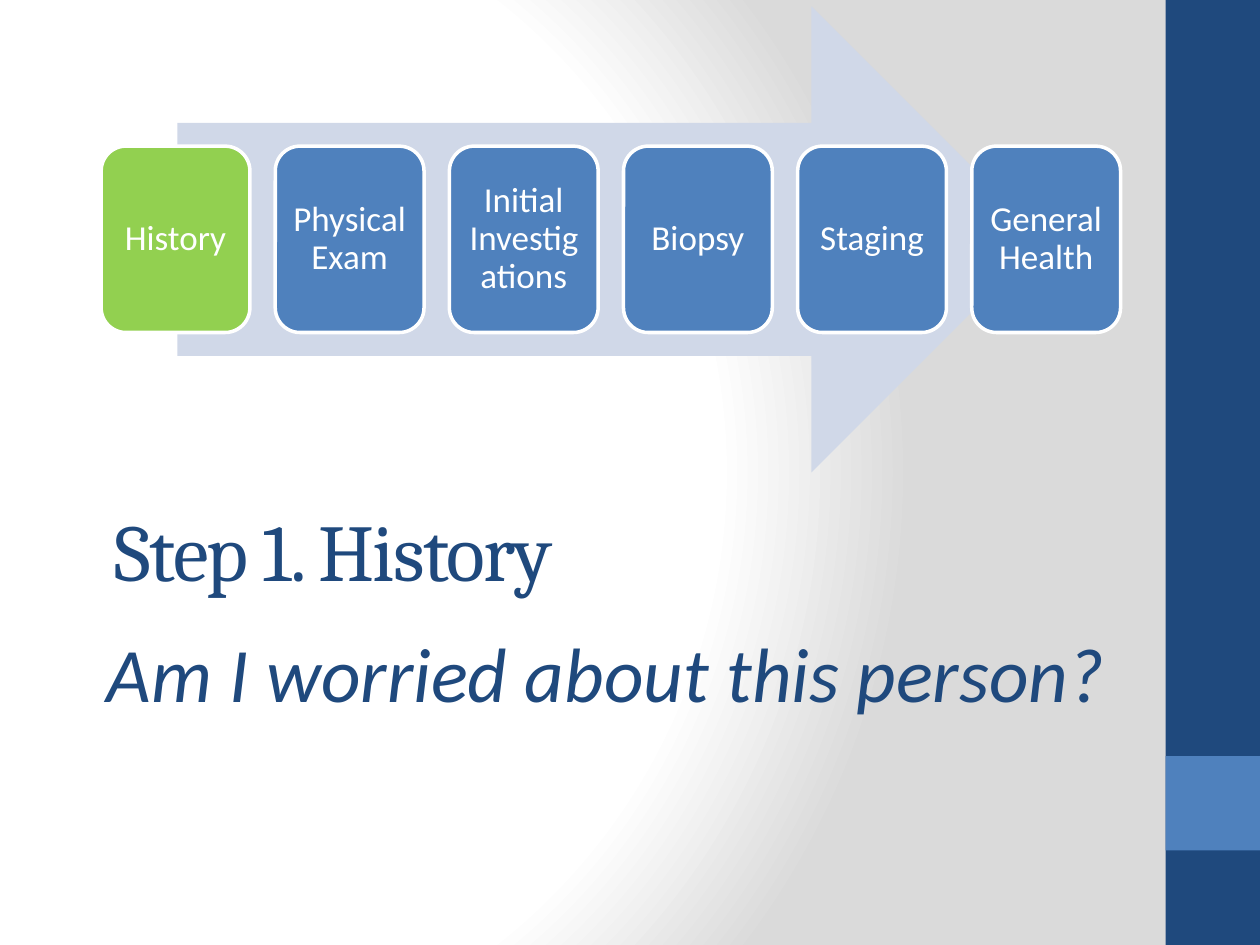
import pptx
import pptx.dml.color
import pptx.enum.shapes
import pptx.enum.text
import pptx.oxml
import pptx.oxml.ns
import pptx.util
from pptx.util import Pt

COLORS = {
    "navy": "1F497D",
    "blue": "4F81BD",
    "pale": "D0D8E8",
    "green": "92D050",
    "white": "FFFFFF",
    "gray": "DADADA",
}
SHAPES = pptx.enum.shapes.MSO_SHAPE
ALIGN = pptx.enum.text.PP_ALIGN
ANCHOR = pptx.enum.text.MSO_ANCHOR


def rgb(name):
    return pptx.dml.color.RGBColor.from_string(COLORS[name])


def write_text(shape, text, size, color, font="Calibri", italic=False,
               align=ALIGN.LEFT, anchor=ANCHOR.TOP, line_spacing=None, tracking=None):
    frame = shape.text_frame
    frame.word_wrap = True
    frame.auto_size = pptx.enum.text.MSO_AUTO_SIZE.NONE
    frame.vertical_anchor = anchor
    paragraph = frame.paragraphs[0]
    paragraph.alignment = align
    if line_spacing:
        paragraph.line_spacing = line_spacing
    run = paragraph.add_run()
    run.text = text
    run.font.name = font
    run.font.size = Pt(size)
    run.font.italic = italic
    run.font.color.rgb = rgb(color)
    if tracking:
        run.font._element.set("spc", str(tracking * 100))


presentation = pptx.Presentation()
presentation.slide_width = Pt(720)
presentation.slide_height = Pt(540)
slide = presentation.slides.add_slide(presentation.slide_layouts[5])

# Background: white glow from the left, fading to gray
slide.background.fill.gradient()
background = slide.background._cSld.bg.bgPr
old_gradient = background.find(pptx.oxml.ns.qn("a:gradFill"))
stops = "".join(
    f'<a:gs pos="{position * 1000}"><a:srgbClr val="{COLORS[color]}"/></a:gs>'
    for position, color in [(0, "white"), (75, "white"), (100, "gray")])
background.replace(old_gradient, pptx.oxml.parse_xml(
    f'<a:gradFill {pptx.oxml.ns.nsdecls("a")} rotWithShape="1"><a:gsLst>{stops}</a:gsLst>'
    '<a:path path="circle"><a:fillToRect l="20000" t="50000" r="100000" b="50000"/></a:path>'
    '</a:gradFill>'))

# Side bar, its accent square and the process arrow
for kind, left, top, width, height, color in [
    (SHAPES.RECTANGLE, 666, 0, 54, 540, "navy"),
    (SHAPES.RECTANGLE, 666, 432, 54, 54, "blue"),
    (SHAPES.RIGHT_ARROW, 101.4, 3.6, 495.5, 266.4, "pale"),
]:
    shape = slide.shapes.add_shape(kind, Pt(left), Pt(top), Pt(width), Pt(height))
    shape.shadow.inherit = False
    shape.fill.solid()
    shape.fill.fore_color.rgb = rgb(color)
    shape.line.fill.background()

# Process steps, the current one in green
steps = ["History", "Physical Exam", "Initial Investigations",
         "Biopsy", "Staging", "General Health"]
current_step = "History"
step_left, step_pitch = 57.8, 99.5
for index, step in enumerate(steps):
    box = slide.shapes.add_shape(SHAPES.ROUNDED_RECTANGLE, Pt(step_left + index * step_pitch),
                                 Pt(83.5), Pt(85), Pt(106.5))
    box.shadow.inherit = False
    box.fill.solid()
    box.fill.fore_color.rgb = rgb("green" if step == current_step else "blue")
    box.line.color.rgb = rgb("white")
    box.line.width = Pt(2)
    frame = box.text_frame
    frame.margin_left = frame.margin_right = Pt(5.5)
    frame.margin_top = frame.margin_bottom = Pt(5.5)
    write_text(box, step, 20, "white", align=ALIGN.CENTER, anchor=ANCHOR.MIDDLE,
               line_spacing=0.9)

# Title, lifted above the question by its bottom margin
title = slide.shapes.title
title.left, title.top, title.width, title.height = Pt(58.3), Pt(259.2), Pt(600), Pt(163.4)
title.text_frame.margin_bottom = Pt(57.6)
write_text(title, "Step 1. History", 46, "navy", font="Cambria",
           anchor=ANCHOR.MIDDLE, tracking=-1)

question = slide.shapes.add_textbox(Pt(54), Pt(354.2), Pt(613.4), Pt(60.5))
write_text(question, "Am I worried about this person?", 44, "navy", italic=True)

presentation.save("out.pptx")
